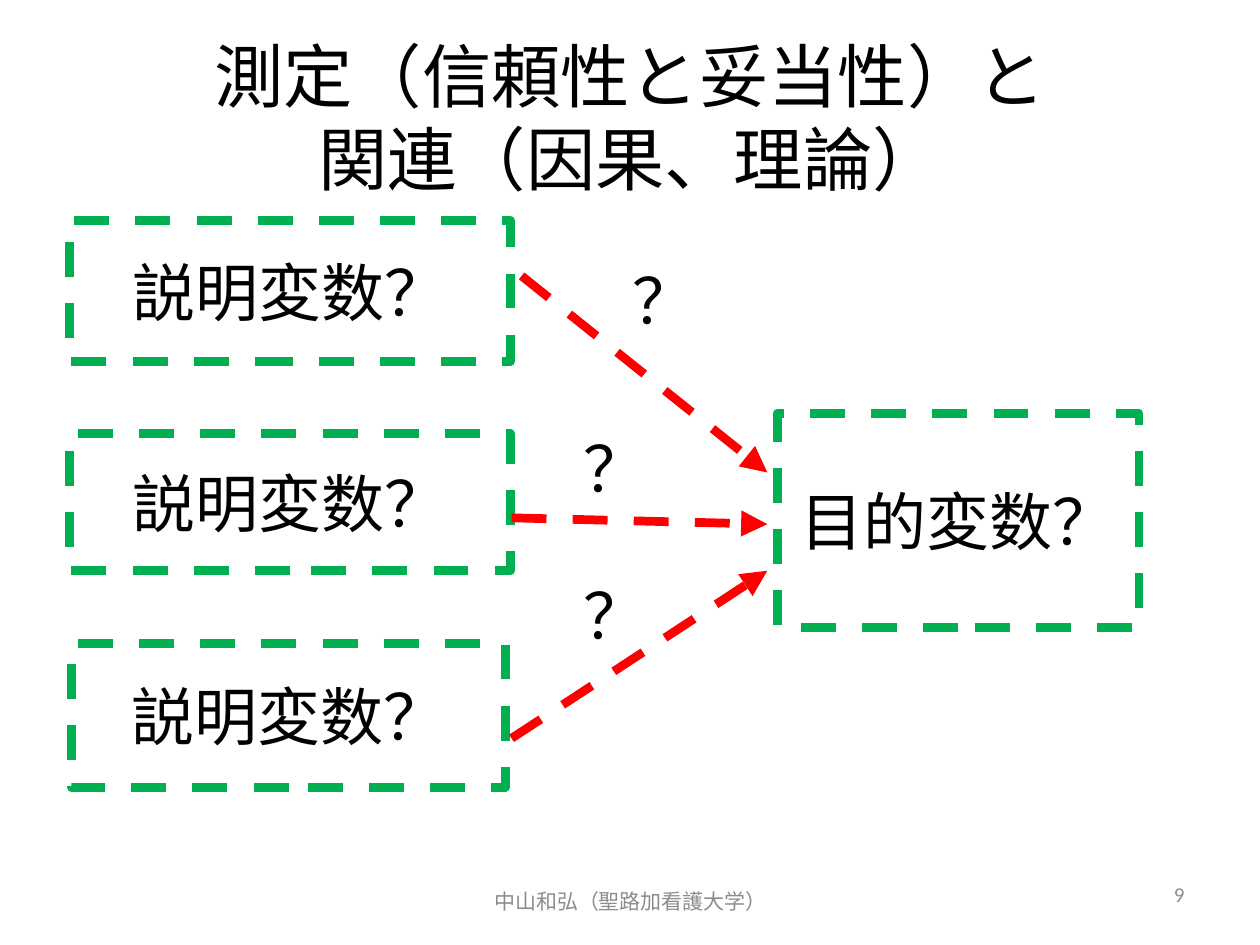
from lxml import etree
from pptx import Presentation
from pptx.dml.color import RGBColor
from pptx.enum.dml import MSO_LINE
from pptx.enum.shapes import MSO_CONNECTOR, MSO_SHAPE
from pptx.enum.text import MSO_ANCHOR, PP_ALIGN
from pptx.oxml.ns import qn
from pptx.util import Inches, Pt

RECTANGLE = MSO_SHAPE.RECTANGLE
STRAIGHT = MSO_CONNECTOR.STRAIGHT
DASH = MSO_LINE.DASH
TOP, MIDDLE = MSO_ANCHOR.TOP, MSO_ANCHOR.MIDDLE
LEFT, CENTER, RIGHT = PP_ALIGN.LEFT, PP_ALIGN.CENTER, PP_ALIGN.RIGHT

BLACK = RGBColor(0x00, 0x00, 0x00)
WHITE = RGBColor(0xFF, 0xFF, 0xFF)
GREEN = RGBColor(0x00, 0xB0, 0x50)
RED = RGBColor(0xFF, 0x00, 0x00)
GRAY = RGBColor(0x8C, 0x8C, 0x8C)


def write_text(frame, text, size=36, font="Calibri", color=BLACK,
               align=LEFT, anchor=TOP):
    """Fill a text frame; a vertical tab in the text is a line break."""
    frame.word_wrap = True
    frame.vertical_anchor = anchor
    paragraph = frame.paragraphs[0]
    paragraph.text = text
    paragraph.alignment = align
    for run in paragraph.runs:
        run.font.size = Pt(size)
        run.font.name = font
        run.font.color.rgb = color


def style_dashed_line(line, color):
    line.color.rgb = color
    line.width = Pt(5)
    line.dash_style = DASH


def add_label(slide, bounds, text, **text_format):
    label = slide.shapes.add_textbox(*map(Inches, bounds))
    write_text(label.text_frame, text, **text_format)


def add_variable(slide, bounds, name):
    variable = slide.shapes.add_shape(RECTANGLE, *map(Inches, bounds))
    variable.shadow.inherit = False
    variable.fill.solid()
    variable.fill.fore_color.rgb = WHITE
    style_dashed_line(variable.line, GREEN)
    write_text(variable.text_frame, name, font="Cambria",
               align=CENTER, anchor=MIDDLE)


def add_arrow(slide, start, end):
    arrow = slide.shapes.add_connector(STRAIGHT, *map(Inches, start + end))
    style_dashed_line(arrow.line, RED)
    # Arrowhead at the end, and no shadow
    etree.SubElement(arrow.line._get_or_add_ln(), qn("a:tailEnd"), type="triangle")
    etree.SubElement(arrow._element.spPr, qn("a:effectLst"))


def main():
    presentation = Presentation()
    presentation.slide_width = Inches(10)
    presentation.slide_height = Inches(7.5)
    slide = presentation.slides.add_slide(presentation.slide_layouts[6])

    # Title
    add_label(slide, (0.5, 0.3, 9, 1.25),
              "測定（信頼性と妥当性）と\v関連（因果、理論）",
              size=39.6, align=CENTER, anchor=MIDDLE)

    # Outcome and explanatory variables
    add_variable(slide, (6.17, 3.28, 2.87, 1.7), "目的変数？")
    for bounds in ((0.55, 1.75, 3.5, 1.12),
                   (0.55, 3.44, 3.5, 1.09),
                   (0.57, 5.11, 3.44, 1.14)):
        add_variable(slide, bounds, "説明変数？")

    # Uncertain relations, each with its question mark
    arrow_end_x = 6.09
    for start, end_y, mark in (((4.14, 2.19), 3.75, (4.92, 2.03)),
                               ((4.06, 4.11), 4.16, (4.53, 3.36)),
                               ((4.06, 5.86), 4.53, (4.53, 4.53))):
        add_arrow(slide, start, (arrow_end_x, end_y))
        add_label(slide, mark + (1.09, 0.71), "？")

    # Footer and page number
    add_label(slide, (3.42, 6.95, 3.17, 0.4), "中山和弘（聖路加看護大学）",
              size=12, color=GRAY, align=CENTER, anchor=MIDDLE)
    add_label(slide, (7.17, 6.95, 2.33, 0.4), "9",
              size=12, color=GRAY, align=RIGHT)

    presentation.save("out.pptx")


if __name__ == "__main__":
    main()
